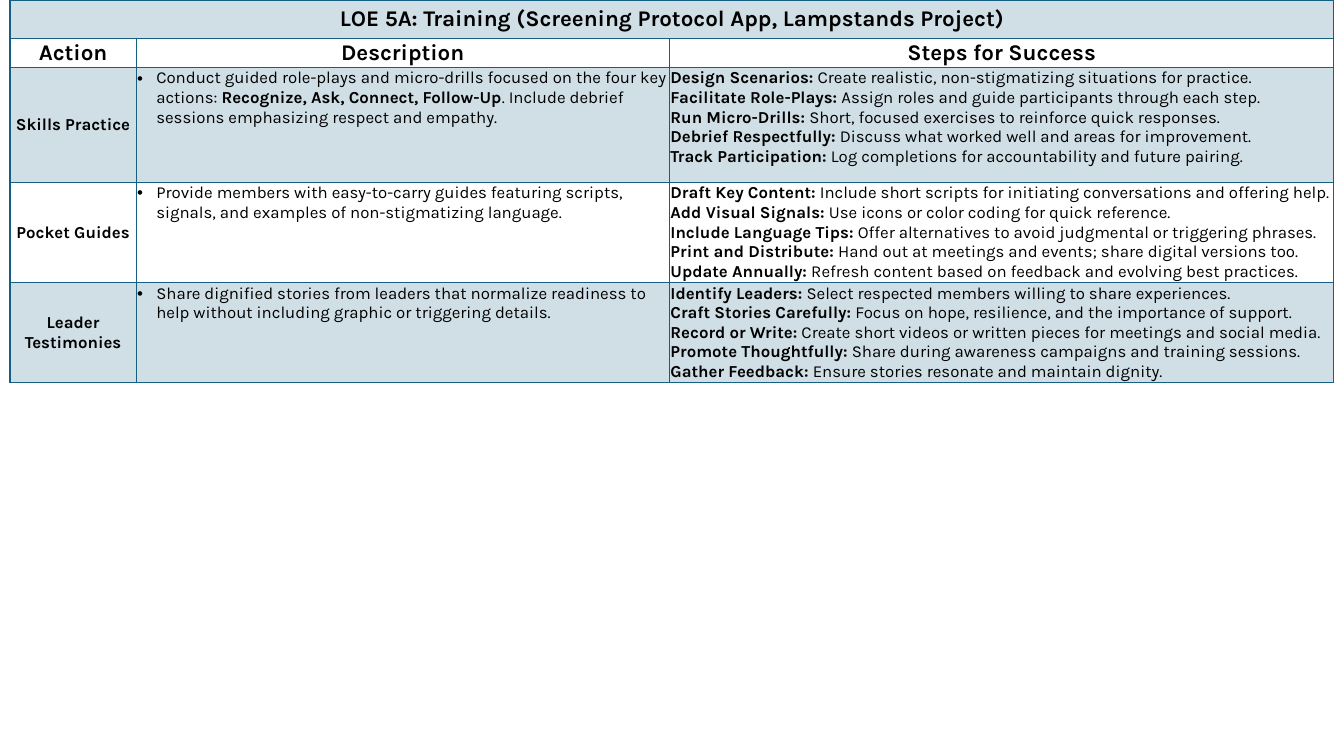
from lxml.etree import SubElement
from pptx import Presentation
from pptx.dml.color import RGBColor
from pptx.enum.text import MSO_ANCHOR, PP_ALIGN
from pptx.oxml.ns import qn
from pptx.util import Inches, Pt

COLORS = {"teal": "156082", "ink": "000000"}
FONT = "Karla"
TINT = 20  # percent opacity of shaded rows
INDENT = Inches(0.19)
COLS = [1.25, 5.29, 6.59]
ROWS = [0.38, 0.29, 1.14, 0.95, 0.95]

TITLE = "LOE 5A: Training (Screening Protocol App, Lampstands Project)"
HEADS = ["Action", "Description", "Steps for Success"]

# Each action: name, description as (text, bold) runs, steps as (lead, rest)
ACTIONS = [
    ("Skills Practice",
     [("Conduct guided role-plays and micro-drills focused on the four key actions: ", False),
      ("Recognize, Ask, Connect, Follow-Up", True),
      (". Include debrief sessions emphasizing respect and empathy.", False)],
     [("Design Scenarios:", "Create realistic, non-stigmatizing situations for practice."),
      ("Facilitate Role-Plays:", "Assign roles and guide participants through each step."),
      ("Run Micro-Drills:", "Short, focused exercises to reinforce quick responses."),
      ("Debrief Respectfully:", "Discuss what worked well and areas for improvement."),
      ("Track Participation:", "Log completions for accountability and future pairing.")]),
    ("Pocket Guides",
     [("Provide members with easy-to-carry guides featuring scripts, signals, "
       "and examples of non-stigmatizing language.", False)],
     [("Draft Key Content:", "Include short scripts for initiating conversations and offering help."),
      ("Add Visual Signals:", "Use icons or color coding for quick reference."),
      ("Include Language Tips:", "Offer alternatives to avoid judgmental or triggering phrases."),
      ("Print and Distribute:", "Hand out at meetings and events; share digital versions too."),
      ("Update Annually:", "Refresh content based on feedback and evolving best practices.")]),
    ("Leader Testimonies",
     [("Share dignified stories from leaders that normalize readiness to help "
       "without including graphic or triggering details.", False)],
     [("Identify Leaders:", "Select respected members willing to share experiences."),
      ("Craft Stories Carefully:", "Focus on hope, resilience, and the importance of support."),
      ("Record or Write:", "Create short videos or written pieces for meetings and social media."),
      ("Promote Thoughtfully:", "Share during awareness campaigns and training sessions."),
      ("Gather Feedback:", "Ensure stories resonate and maintain dignity.")]),
]


def color(name):
    return RGBColor.from_string(COLORS[name])


def style_cell(cell, shaded):
    """Set margins, borders and fill of a cell."""
    cell.margin_left = cell.margin_right = Inches(0.01)
    cell.margin_top = cell.margin_bottom = Inches(0.01)
    props = cell._tc.get_or_add_tcPr()
    for side in ("lnL", "lnR", "lnT", "lnB"):
        line = SubElement(props, qn(f"a:{side}"), w=str(Pt(1)))
        fill = SubElement(line, qn("a:solidFill"))
        SubElement(fill, qn("a:srgbClr"), val=COLORS["teal"])
    if shaded:
        cell.fill.solid()
        cell.fill.fore_color.rgb = color("teal")
        tone = props.find(qn("a:solidFill")).find(qn("a:srgbClr"))
        SubElement(tone, qn("a:alpha"), val=str(TINT * 1000))
    else:
        cell.fill.background()


def add_bullet(para):
    props = para._p.get_or_add_pPr()
    props.set("marL", str(INDENT))
    props.set("indent", str(-INDENT))
    SubElement(props, qn("a:buFont"), typeface="Arial")
    SubElement(props, qn("a:buChar"), char="•")


def write(cell, paras, size=12, center=False, bullet=False):
    """Fill a cell with paragraphs, each a list of (text, bold) runs."""
    frame = cell.text_frame
    cell.vertical_anchor = MSO_ANCHOR.MIDDLE if center else MSO_ANCHOR.TOP
    for i, runs in enumerate(paras):
        para = frame.add_paragraph() if i else frame.paragraphs[0]
        para.alignment = PP_ALIGN.CENTER if center else PP_ALIGN.LEFT
        if bullet:
            add_bullet(para)
        for text, bold in runs:
            run = para.add_run()
            run.text = text
            run.font.name = FONT
            run.font.size = Pt(size)
            run.font.bold = bold
            run.font.color.rgb = color("ink")


def add_plan(slide, left, top):
    """Place the training table with its top left corner at the given point."""
    frame = slide.shapes.add_table(
        len(ROWS), len(COLS), Inches(left), Inches(top),
        Inches(sum(COLS)), Inches(sum(ROWS)))
    table = frame.table
    table.first_row = table.horz_banding = False
    for col, width in zip(table.columns, COLS):
        col.width = Inches(width)
    for i, (row, height) in enumerate(zip(table.rows, ROWS)):
        row.height = Inches(height)
        for cell in row.cells:
            style_cell(cell, shaded=i % 2 == 0)

    # Title and column heads
    table.cell(0, 0).merge(table.cell(0, len(COLS) - 1))
    write(table.cell(0, 0), [[(TITLE, True)]], 16, center=True)
    for j, head in enumerate(HEADS):
        write(table.cell(1, j), [[(head, True)]], 16, center=True)

    # Actions
    for i, (name, about, steps) in enumerate(ACTIONS, 2):
        write(table.cell(i, 0), [[(name, True)]], center=True)
        write(table.cell(i, 1), [about], bullet=True)
        write(table.cell(i, 2),
              [[(lead, True), (f" {rest}", False)] for lead, rest in steps])


def main():
    deck = Presentation()
    deck.slide_width = Inches(13.33)
    deck.slide_height = Inches(7.5)
    slide = deck.slides.add_slide(deck.slide_layouts[6])
    add_plan(slide, 0.1, 0)
    deck.save("out.pptx")


if __name__ == "__main__":
    main()
